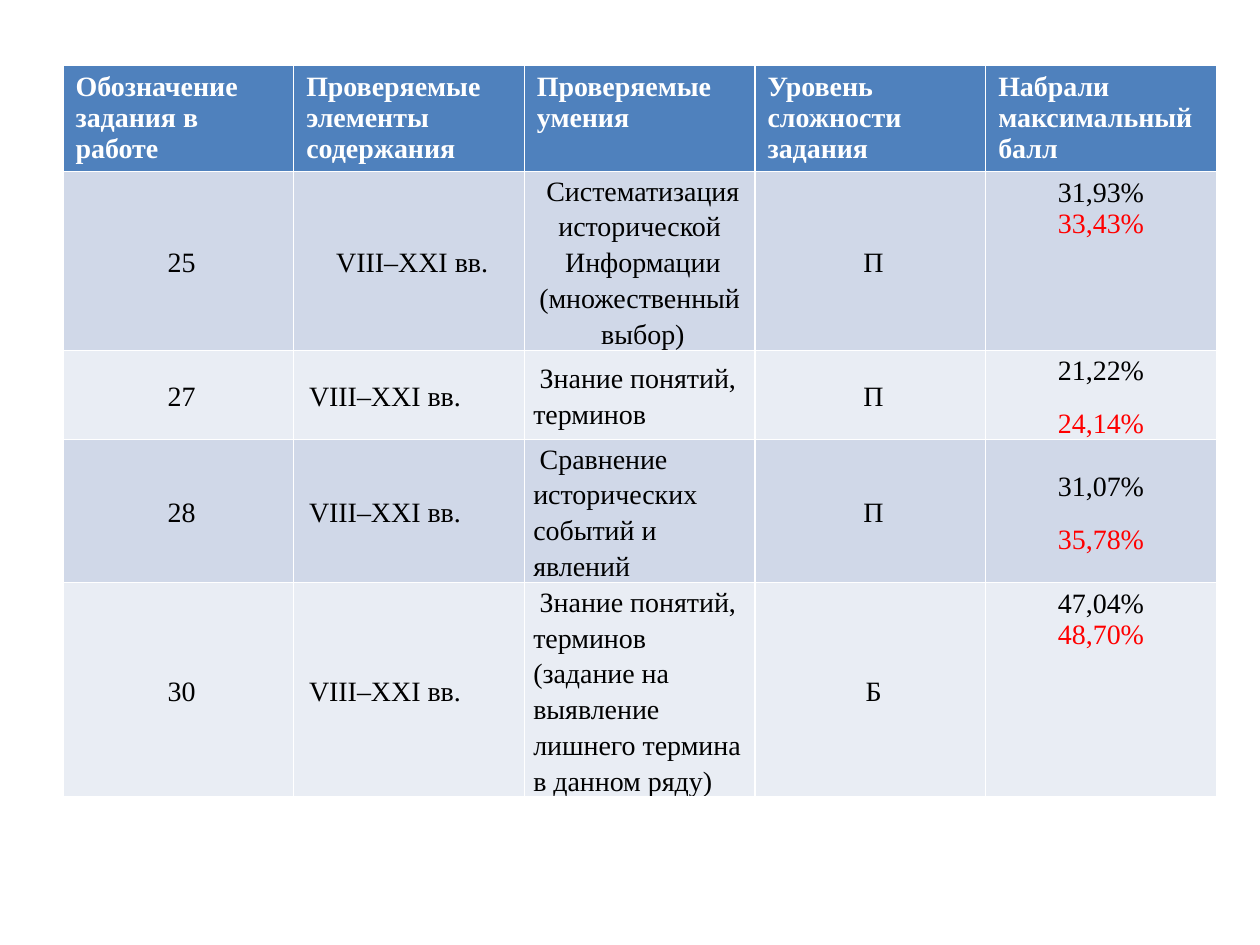
import pptx
import pptx.util
import pptx.dml.color
import pptx.enum.text

Cm = pptx.util.Cm
Pt = pptx.util.Pt
RGBColor = pptx.dml.color.RGBColor
ALIGN = pptx.enum.text.PP_ALIGN
MIDDLE = pptx.enum.text.MSO_ANCHOR.MIDDLE

WHITE = RGBColor(0xFF, 0xFF, 0xFF)
BLACK = RGBColor(0, 0, 0)
RED = RGBColor(0xFF, 0, 0)
BLUE = RGBColor(0x4F, 0x81, 0xBD)
BANDS = [RGBColor(0xD0, 0xD8, 0xE8), RGBColor(0xE9, 0xED, 0xF4)]

HEADS = [
    "Обозначение задания в работе",
    "Проверяемые элементы содержания",
    "Проверяемые умения",
    "Уровень сложности задания",
    "Набрали максимальный балл",
]
AGES = "VIII–XXI вв."
TASKS = [
    ("25", ["Систематизация исторической", "Информации (множественный", "выбор)"],
     "П", ["31,93%", "33,43%"]),
    ("27", ["Знание понятий, терминов"], "П", ["21,22%", "24,14%"]),
    ("28", ["Сравнение исторических событий и явлений"], "П", ["31,07%", "35,78%"]),
    ("30", ["Знание понятий, терминов (задание на выявление лишнего термина в данном ряду)"],
     "Б", ["47,04%", "48,70%"]),
]


def write(cell, lines, inks, bold=False):
    frame = cell.text_frame
    for i, line in enumerate(lines):
        para = frame.paragraphs[0] if i == 0 else frame.add_paragraph()
        run = para.add_run()
        run.text = line
        run.font.name = "Times New Roman"
        run.font.size = Pt(16)
        run.font.bold = bold
        run.font.color.rgb = inks[i]


def paint(cell, color):
    cell.fill.solid()
    cell.fill.fore_color.rgb = color


deck = pptx.Presentation()
deck.slide_width = Cm(25.4)
deck.slide_height = Cm(19.05)
slide = deck.slides.add_slide(deck.slide_layouts[6])

shape = slide.shapes.add_table(
    len(TASKS) + 1, len(HEADS), Cm(1.27), Cm(1.32), Cm(23.25), Cm(15.88))
table = shape.table
for col in table.columns:
    col.width = Cm(4.65)
for row in table.rows:
    row.height = Cm(1.04)
shape.height = Cm(15.88)

for c, head in enumerate(HEADS):
    cell = table.cell(0, c)
    paint(cell, BLUE)
    write(cell, [head], [WHITE], True)

for r, (code, skill, level, score) in enumerate(TASKS):
    first = r == 0
    for c, lines in enumerate([[code], [AGES], skill, [level], score]):
        cell = table.cell(r + 1, c)
        paint(cell, BANDS[r % 2])
        last = c == 4
        write(cell, lines, [BLACK, RED] if last else [BLACK] * len(lines))
        tight = not last or r in (1, 2)
        if tight:
            cell.vertical_anchor = MIDDLE
            cell.margin_left = cell.margin_right = Cm(0.18)
            cell.margin_top = cell.margin_bottom = 0
        for para in cell.text_frame.paragraphs:
            if first or c not in (1, 2):
                para.alignment = ALIGN.CENTER
            if tight:
                para.line_spacing = 1.15
            if tight and last:
                para.space_after = Pt(10)
            if not last:
                props = para._p.get_or_add_pPr()
                props.set("marL", "0")
                props.set("indent", str(Cm(0.13)))

deck.save("out.pptx")
